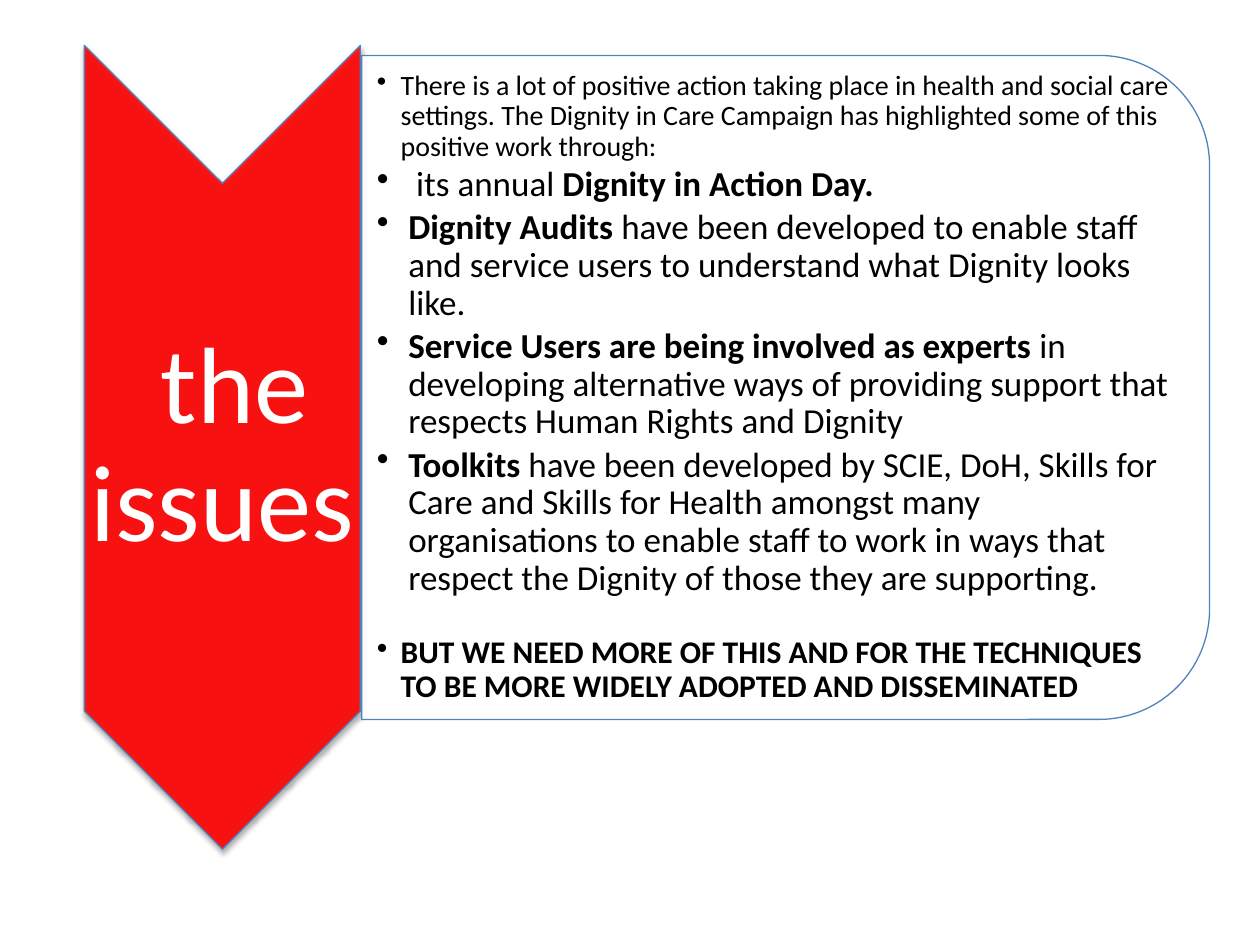
from lxml import etree
from pptx import Presentation
from pptx.dml.color import RGBColor
from pptx.enum.shapes import MSO_SHAPE as Shape
from pptx.enum.text import MSO_ANCHOR as Anchor, PP_ALIGN as Align
from pptx.oxml import parse_xml
from pptx.oxml.ns import nsdecls, qn
from pptx.util import Inches, Pt

RED = RGBColor(0xFF, 0x00, 0x00)
WHITE = RGBColor(0xFF, 0xFF, 0xFF)
BLACK = RGBColor(0x00, 0x00, 0x00)
BLUE = RGBColor(0x4F, 0x81, 0xBD)
FONT = "Calibri"

POINTS = [
    (16, 0.19, 0, [("There is a lot of positive action taking place in health and social care "
                    "settings. The Dignity in Care Campaign has highlighted some of this "
                    "positive work through:", False)]),
    (20, 0.25, 0, [(" its annual ", False), ("Dignity in Action Day.", True)]),
    (20, 0.25, 0, [("Dignity Audits ", True),
                   ("have been developed to enable staff and service users to understand "
                    "what Dignity looks like.", False)]),
    (20, 0.25, 0, [("Service Users are being involved as experts ", True),
                   ("in developing alternative ways of providing support that respects "
                    "Human Rights and Dignity", False)]),
    (20, 0.25, 0, [("Toolkits", True),
                   (" have been developed by SCIE, DoH, Skills for Care and Skills for Health "
                    "amongst many organisations to enable staff to work in ways that respect "
                    "the Dignity of those they are supporting.", False)]),
    (18, 0.19, 19, [("BUT WE NEED MORE OF THIS AND FOR THE TECHNIQUES TO BE MORE WIDELY "
                     "ADOPTED AND DISSEMINATED", True)]),
]


def add_turned_shape(slide, kind, box, color):
    """Add a translucent outlined shape, turned a quarter, that covers the box."""
    left, top, width, height = box
    shape = slide.shapes.add_shape(
        kind, Inches(left + (width - height) / 2), Inches(top + (height - width) / 2),
        Inches(height), Inches(width))
    shape.rotation = 90
    shape.shadow.inherit = False
    shape.fill.solid()
    shape.fill.fore_color.rgb = color
    color_element = shape.fill._xPr.find(qn("a:solidFill"))[0]
    etree.SubElement(color_element, qn("a:alpha"), val="90000")
    shape.line.color.rgb = BLUE
    shape.line.width = Pt(0.75)
    return shape


def add_shadow(shape):
    """Give the shape a soft shadow that falls straight down."""
    effects = shape._element.spPr.find(qn("a:effectLst"))
    effects.append(parse_xml(
        f'<a:outerShdw {nsdecls("a")} blurRad="{Pt(3.1)}" dist="{Pt(1.8)}" dir="5400000" '
        'rotWithShape="0"><a:srgbClr val="000000"><a:alpha val="35000"/></a:srgbClr>'
        '</a:outerShdw>'))


def add_text_frame(slide, box, left_margin, margin):
    """Add a wrapping, vertically centred text box and return its frame."""
    frame = slide.shapes.add_textbox(*map(Inches, box)).text_frame
    frame.word_wrap = True
    frame.vertical_anchor = Anchor.MIDDLE
    frame.margin_left = Inches(left_margin)
    frame.margin_top = frame.margin_right = frame.margin_bottom = Inches(margin)
    return frame


def style_paragraph(paragraph, size, color):
    """Set the line spacing and font of a paragraph."""
    paragraph.line_spacing = 0.9
    paragraph.font.name = FONT
    paragraph.font.size = Pt(size)
    paragraph.font.color.rgb = color


def add_bullet(paragraph, indent):
    """Give the paragraph a round bullet with a hanging indent."""
    properties = paragraph._p.get_or_add_pPr()
    properties.set("marL", str(Inches(indent)))
    properties.set("indent", str(-Inches(indent)))
    etree.SubElement(properties, qn("a:buChar"), char="•")


def add_title_arrow(slide, box):
    """Draw the downward chevron with the title in its middle."""
    left, top, width, height = box
    add_shadow(add_turned_shape(slide, Shape.CHEVRON, box, RED))
    notch = width / 2
    frame = add_text_frame(slide, (left, top + notch, width, height - 2 * notch), 0.04, 0.04)
    paragraph = frame.paragraphs[0]
    paragraph.text = " the issues"
    paragraph.alignment = Align.CENTER
    style_paragraph(paragraph, 62, WHITE)


def add_points_panel(slide, box):
    """Draw the rounded panel with the bulleted points."""
    left, top, width, height = box
    add_turned_shape(slide, Shape.ROUND_2_SAME_RECTANGLE, box, WHITE)
    frame = add_text_frame(slide, (left, top + 0.26, width - 0.25, height - 0.51), 0.12, 0.01)
    for number, (size, indent, gap, runs) in enumerate(POINTS):
        paragraph = frame.add_paragraph() if number else frame.paragraphs[0]
        add_bullet(paragraph, indent)
        style_paragraph(paragraph, size, BLACK)
        paragraph.space_before = Pt(gap)
        paragraph.space_after = Pt(0.15 * size)
        for text, bold in runs:
            run = paragraph.add_run()
            run.text = text
            run.font.bold = bold


def main():
    """Build and save the presentation."""
    presentation = Presentation()
    presentation.slide_width = Inches(10)
    presentation.slide_height = Inches(7.5)
    slide = presentation.slides.add_slide(presentation.slide_layouts[6])
    add_title_arrow(slide, (0.67, 0.36, 2.19, 6.38))
    add_points_panel(slide, (2.87, 0.44, 6.73, 5.27))
    presentation.save("out.pptx")


if __name__ == "__main__":
    main()
